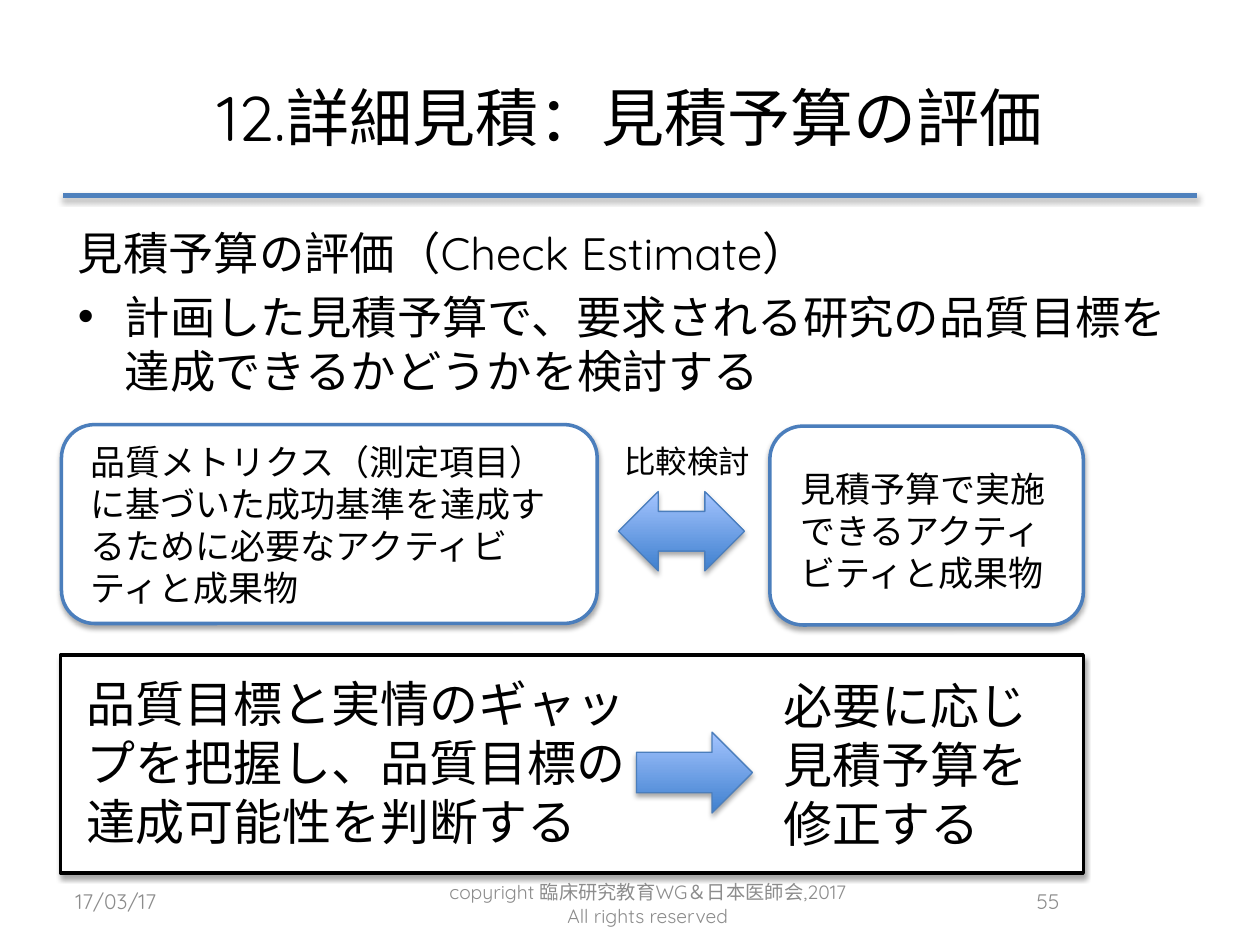
from lxml import etree
from pptx import Presentation
from pptx import util as u
from pptx.dml.color import RGBColor
from pptx.enum import shapes, text
from pptx.oxml import ns

FONT = "Quicksand"
BLACK, WHITE, GREY = "000000", "FFFFFF", "8C8C8C"
RULE_BLUE, EDGE_BLUE = "4F81BD", "4B7EBC"
ARROW_STOPS = ("3F80CE", "A4C4FF")
LEFT, CENTER, RIGHT = text.PP_ALIGN.LEFT, text.PP_ALIGN.CENTER, text.PP_ALIGN.RIGHT
TOP, MIDDLE = text.MSO_ANCHOR.TOP, text.MSO_ANCHOR.MIDDLE


def color(value):
    return RGBColor.from_string(value)


def cm(*lengths):
    return [u.Cm(length) for length in lengths]


def write(para, words, size=20, tint=BLACK, align=LEFT, before=0, bullet=None):
    if bullet:
        properties = para._p.get_or_add_pPr()
        indent = u.Cm(0.95)
        properties.set("marL", str(indent))
        properties.set("indent", str(-indent))
        etree.SubElement(properties, ns.qn("a:buFont"), typeface="Arial")
        etree.SubElement(properties, ns.qn("a:buChar"), char=bullet)
    para.alignment = align
    para.space_before = u.Pt(before)
    span = para.add_run()
    span.text = words
    span.font.name = FONT
    span.font.size = u.Pt(size)
    span.font.color.rgb = color(tint)


def cast_shadow(shape):
    properties = shape._element.spPr
    effects = properties.find(ns.qn("a:effectLst"))
    if effects is None:
        effects = etree.SubElement(properties, ns.qn("a:effectLst"))
    shadow = etree.SubElement(
        effects, ns.qn("a:outerShdw"), blurRad=str(u.Pt(3.1)),
        dist=str(u.Pt(1.8)), dir="5400000", rotWithShape="0")
    tint = etree.SubElement(shadow, ns.qn("a:srgbClr"), val=BLACK)
    etree.SubElement(tint, ns.qn("a:alpha"), val="35000")


class SlideBuilder:
    def __init__(self, deck):
        self.page = deck.slides.add_slide(deck.slide_layouts[5])

    def title(self, place, words, size):
        box = self.page.shapes.title
        box.left, box.top, box.width, box.height = cm(*place)
        box.text_frame.word_wrap = True
        box.text_frame.vertical_anchor = MIDDLE
        write(box.text_frame.paragraphs[0], words, size=size, align=CENTER)

    def rule(self, left, right, y):
        line = self.page.shapes.add_connector(
            shapes.MSO_CONNECTOR.STRAIGHT, *cm(left, y, right, y))
        line.line.color.rgb = color(RULE_BLUE)
        line.line.width = u.Pt(3)
        cast_shadow(line)

    def shape(self, kind, place, edge, width):
        shape = self.page.shapes.add_shape(kind, *cm(*place))
        shape.line.color.rgb = color(edge)
        shape.line.width = u.Pt(width)
        shape.shadow.inherit = False
        cast_shadow(shape)
        return shape

    def panel(self, kind, place, edge=EDGE_BLUE):
        panel = self.shape(kind, place, edge, 2)
        panel.fill.solid()
        panel.fill.fore_color.rgb = color(WHITE)

    def arrow(self, kind, place):
        arrow = self.shape(kind, place, EDGE_BLUE, 0.75)
        arrow.fill.gradient()
        arrow.fill.gradient_angle = 90
        for stop, position, tint in zip(arrow.fill.gradient_stops, (0, 1), ARROW_STOPS):
            stop.position = position
            stop.color.rgb = color(tint)

    def label(self, place, words, anchor=TOP, **style):
        box = self.page.shapes.add_textbox(*cm(*place))
        box.text_frame.word_wrap = True
        box.text_frame.vertical_anchor = anchor
        write(box.text_frame.paragraphs[0], words, **style)
        return box.text_frame


def main():
    deck = Presentation()
    deck.slide_width, deck.slide_height = cm(25.4, 19.05)
    slide = SlideBuilder(deck)
    kinds = shapes.MSO_SHAPE

    slide.title((1.27, 0.76, 22.86, 3.18), "12.詳細見積：見積予算の評価", 36)
    slide.rule(1.27, 24.13, 3.94)

    body = slide.label((1.32, 4.42, 22.86, 3.71),
                       "見積予算の評価（Check Estimate）", size=25.9)
    write(body.add_paragraph(),
          "計画した見積予算で、要求される研究の品質目標を達成できるかどうかを検討する",
          size=25.9, before=5.2, bullet="•")

    slide.panel(kinds.ROUNDED_RECTANGLE, (1.24, 8.56, 10.8, 4.01))
    slide.label((1.57, 8.76, 10.11, 3.63),
                "品質メトリクス（測定項目）に基づいた成功基準を達成するために必要なアクティビティと成果物")
    slide.panel(kinds.ROUNDED_RECTANGLE, (15.52, 8.59, 6.32, 4.01))
    slide.label((15.88, 9.3, 5.74, 2.82), "見積予算で実施できるアクティビティと成果物")
    slide.label((12.34, 8.79, 3.28, 1.02), "比較検討", size=18)
    slide.arrow(kinds.LEFT_RIGHT_ARROW, (12.47, 9.91, 2.54, 1.6))

    slide.panel(kinds.RECTANGLE, (1.22, 13.21, 20.62, 4.39), BLACK)
    slide.label((1.5, 13.46, 11.91, 3.84),
                "品質目標と実情のギャップを把握し、品質目標の達成可能性を判断する", size=28)
    slide.label((15.54, 13.49, 6.17, 3.84), "必要に応じ見積予算を修正する", size=28)
    slide.arrow(kinds.RIGHT_ARROW, (12.83, 14.76, 2.34, 1.63))

    footers = [
        (1.27, 5.92, 1.02, "17/03/17", 12, LEFT),
        (8.69, 8.74, 1.14,
         "copyright 臨床研究教育WG＆日本医師会,2017 All rights reserved", 11, CENTER),
        (18.21, 3.4, 1.02, "55", 12, RIGHT),
    ]
    for left, width, height, words, size, align in footers:
        slide.label((left, 17.65, width, height), words, anchor=MIDDLE,
                    size=size, tint=GREY, align=align)

    deck.save("out.pptx")


if __name__ == "__main__":
    main()
